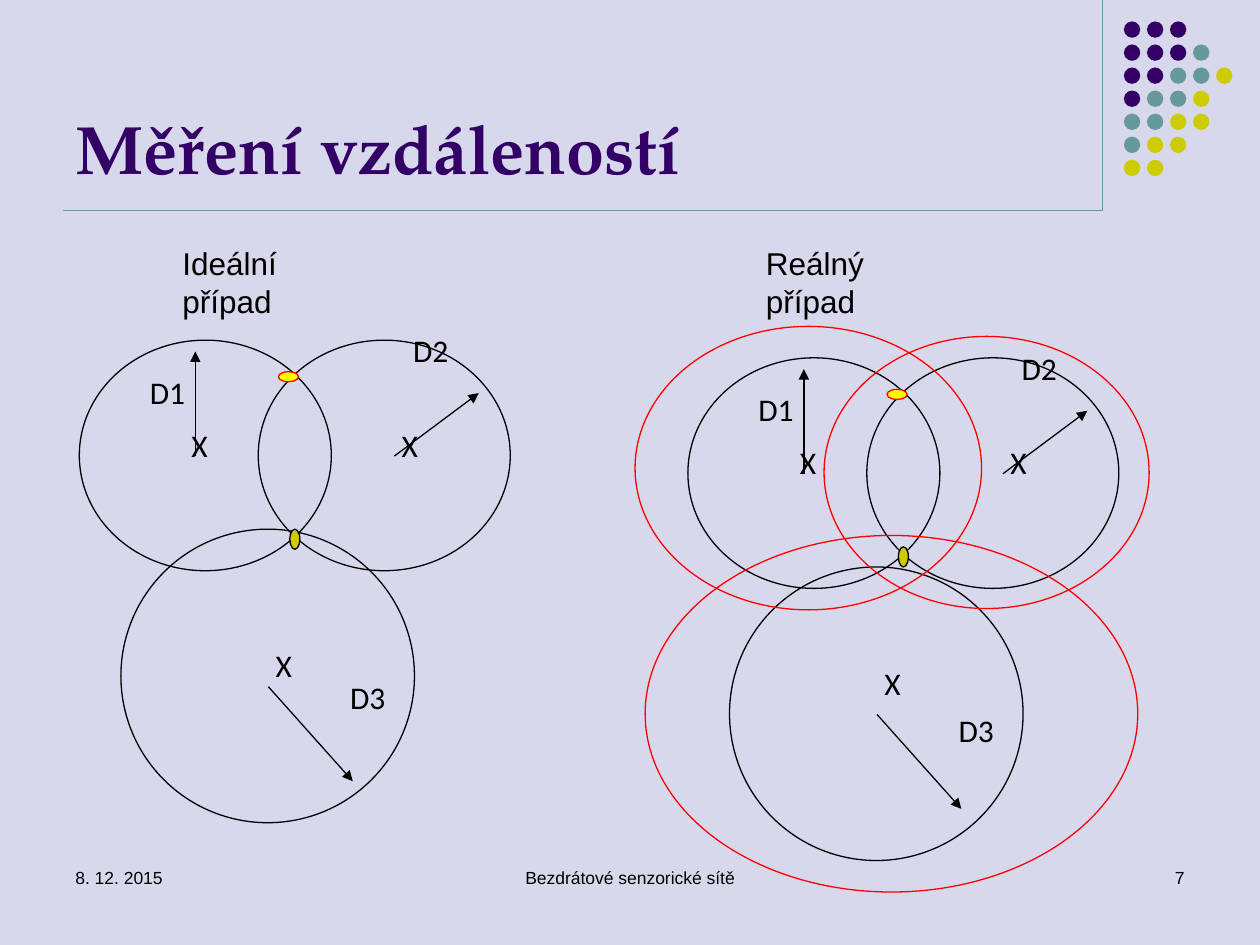
from dataclasses import dataclass

from pptx import Presentation
from pptx.dml.color import RGBColor
from pptx.enum.shapes import MSO_CONNECTOR as Connector, MSO_SHAPE as Shape
from pptx.enum.text import MSO_ANCHOR as Anchor, PP_ALIGN as Align
from pptx.oxml.ns import qn
from pptx.util import Inches, Pt
from lxml.etree import SubElement


@dataclass(frozen=True)
class Theme:
    background: str = "D8D8EC"
    purple: str = "330066"
    teal: str = "669999"
    olive: str = "CCCC00"
    yellow: str = "FFFF00"
    red: str = "FF0000"
    black: str = "000000"
    title_font: str = "TeX Gyre Pagella"
    body_font: str = "Arial"
    label_font: str = "Calibri"
    title_size: float = 39
    body_size: float = 18
    footer_size: float = 10
    line_width: float = 0.75


THEME = Theme()


def color(value):
    return RGBColor.from_string(value)


def place(shape, left, top, width, height):
    shape.left, shape.top = Inches(left), Inches(top)
    shape.width, shape.height = Inches(width), Inches(height)


def write(shape, text, *, font=THEME.body_font, size=THEME.body_size, ink=THEME.black,
          bold=False, align=Align.LEFT, anchor=Anchor.TOP, wrap=True, right_inset=0.1):
    frame = shape.text_frame
    frame.word_wrap = wrap
    frame.vertical_anchor = anchor
    frame.margin_left, frame.margin_right = Inches(0.1), Inches(right_inset)
    frame.margin_top = frame.margin_bottom = Inches(0.05)
    paragraph = frame.paragraphs[0]
    paragraph.alignment = align
    run = paragraph.add_run()
    run.text = text
    run.font.name, run.font.size, run.font.bold = font, Pt(size), bold
    run.font.color.rgb = color(ink)


def add_text(slide, box, text, **style):
    write(slide.shapes.add_textbox(*map(Inches, box)), text, **style)


def add_ellipse(slide, box, fill=None, line=THEME.black):
    shape = slide.shapes.add_shape(Shape.OVAL, *map(Inches, box))
    shape.shadow.inherit = False
    if fill:
        shape.fill.solid()
        shape.fill.fore_color.rgb = color(fill)
    else:
        shape.fill.background()
    if line:
        shape.line.color.rgb = color(line)
        shape.line.width = Pt(THEME.line_width)
    else:
        shape.line.fill.background()


def add_line(slide, start, end, ink=THEME.black, arrow=False):
    connector = slide.shapes.add_connector(Connector.STRAIGHT, *map(Inches, (*start, *end)))
    connector.line.color.rgb = color(ink)
    connector.line.width = Pt(THEME.line_width)
    properties = connector._element.spPr
    if arrow:
        SubElement(properties.find(qn("a:ln")), qn("a:tailEnd"), type="triangle")
    SubElement(properties, qn("a:effectLst"))


def add_dots(slide, left, top):
    inks = {"P": THEME.purple, "T": THEME.teal, "Y": THEME.olive}
    pitch, size = 0.183, 0.13
    for row, pattern in enumerate(("PPP", "PPPT", "PPTTY", "PTTY", "TTYY", "TYY", "YY")):
        for column, key in enumerate(pattern):
            box = (left + column * pitch, top + row * pitch, size, size)
            add_ellipse(slide, box, fill=inks[key], line=None)


def add_header(slide, left, top, width, bottom):
    corner = (left + width, bottom)
    add_line(slide, (left + width, top), corner, THEME.teal)
    add_line(slide, (left, bottom), corner, THEME.teal)
    add_dots(slide, left + width + 0.17, top + 0.17)
    title = slide.shapes.title
    place(title, left, top + 0.13, width, 1.41)
    write(title, "Měření vzdáleností", font=THEME.title_font, size=THEME.title_size,
          ink=THEME.purple, bold=True, anchor=Anchor.BOTTOM)


def add_footer(slide, top, height):
    for left, width, text, align in (
        (0.5, 2.33, "8. 12. 2015", Align.LEFT),
        (3.42, 3.16, "Bezdrátové senzorické sítě", Align.CENTER),
        (7.17, 2.33, "7", Align.RIGHT),
    ):
        add_text(slide, (left, top, width, height), text, size=THEME.footer_size, align=align)


def add_ranges(slide, left, top, lower_circle, lower_arrow, lower_label):
    def at(x, y):
        return left + x, top + y

    for x, y, width, height in ((0, 0, 2, 1.83), (1.42, 0, 2, 1.83),
                                (0.33, lower_circle, 2.33, 2.33)):
        add_ellipse(slide, (*at(x, y), width, height))
    for x, y, run, rise in ((2.5, 0.92, 0.67, -0.5), (0.92, 0.92, 0, -0.83),
                            (1.5, lower_arrow, 0.67, 0.75)):
        add_line(slide, at(x, y), at(x + run, y + rise), arrow=True)
    add_ellipse(slide, (*at(1.67, 1.5), 0.08, 0.16), fill=THEME.olive)
    for text, x, y, width in (
        ("X", 0.79, 0.63, 0.33), ("X", 2.46, 0.63, 0.33), ("X", 1.46, 2.38, 0.33),
        ("D1", 0.46, 0.21, 0.48), ("D2", 2.55, -0.12, 0.48), ("D3", 2.05, lower_label, 0.48),
    ):
        add_text(slide, (*at(x, y), width, 0.4), text, font=THEME.label_font, wrap=False)
    add_ellipse(slide, (*at(1.58, 0.25), 0.16, 0.08), fill=THEME.yellow, line=THEME.red)


def add_error_ranges(slide, left, top):
    for x, y, width, height in ((1.5, 0.08, 2.58, 2.16), (0, 0, 2.75, 2.25),
                                (0.08, 1.66, 3.91, 2.83)):
        add_ellipse(slide, (left + x, top + y, width, height), line=THEME.red)


def main():
    presentation = Presentation()
    presentation.slide_width, presentation.slide_height = Inches(10), Inches(7.5)
    slide = presentation.slides.add_slide(presentation.slide_layouts[5])
    slide.background.fill.solid()
    slide.background.fill.fore_color.rgb = color(THEME.background)

    add_header(slide, 0.5, 0, 8.25, 1.67)
    add_footer(slide, 6.83, 0.5)
    add_ranges(slide, 0.63, 2.7, lower_circle=1.5, lower_arrow=2.75, lower_label=2.63)
    add_ranges(slide, 5.46, 2.84, lower_circle=1.66, lower_arrow=2.83, lower_label=2.75)
    add_error_ranges(slide, 5.04, 2.59)
    for left, text in ((1.35, "Ideální případ"), (5.98, "Reálný případ")):
        add_text(slide, (left, 1.89, 1.73, 0.38), text, right_inset=0.3)
    presentation.save("out.pptx")


if __name__ == "__main__":
    main()
